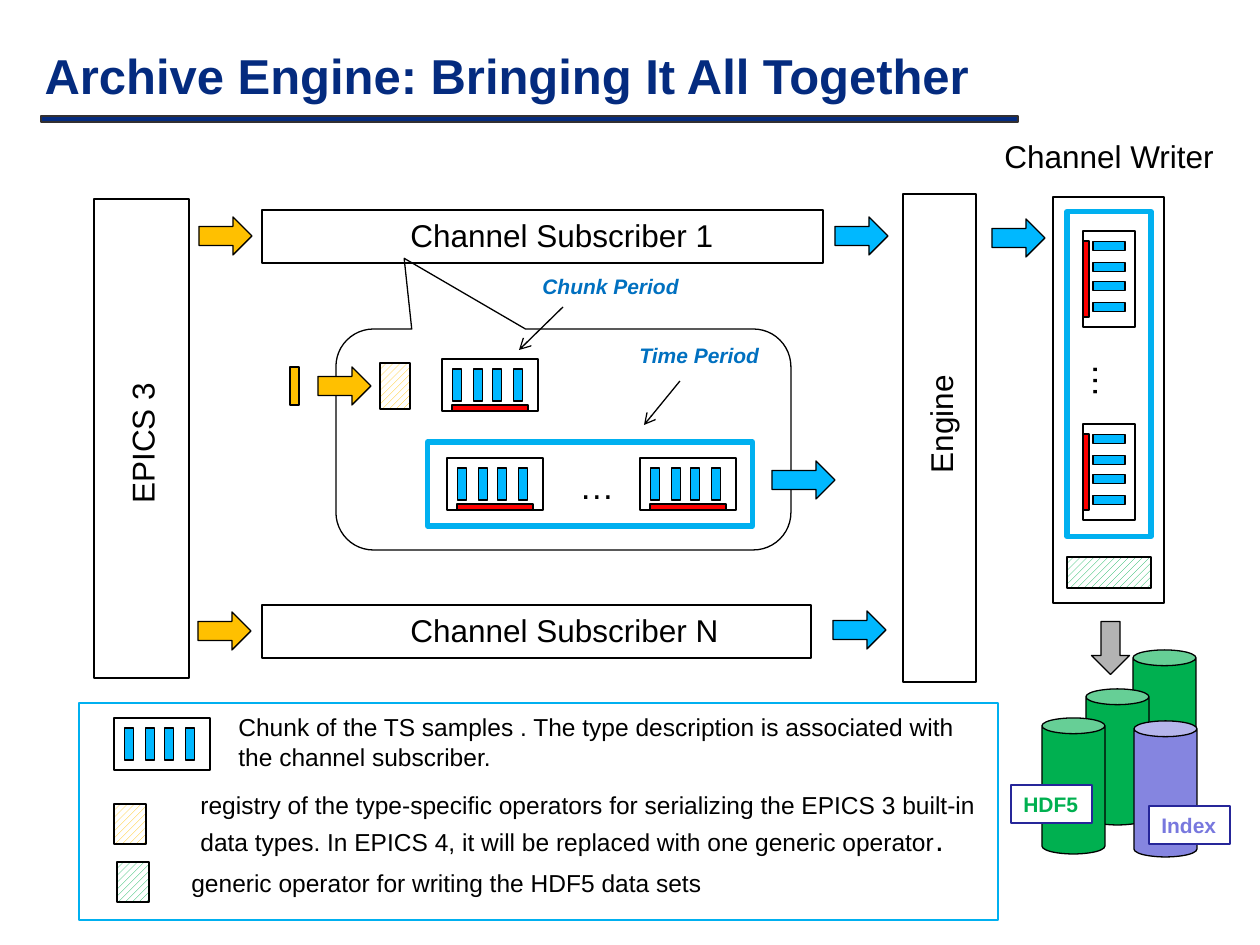
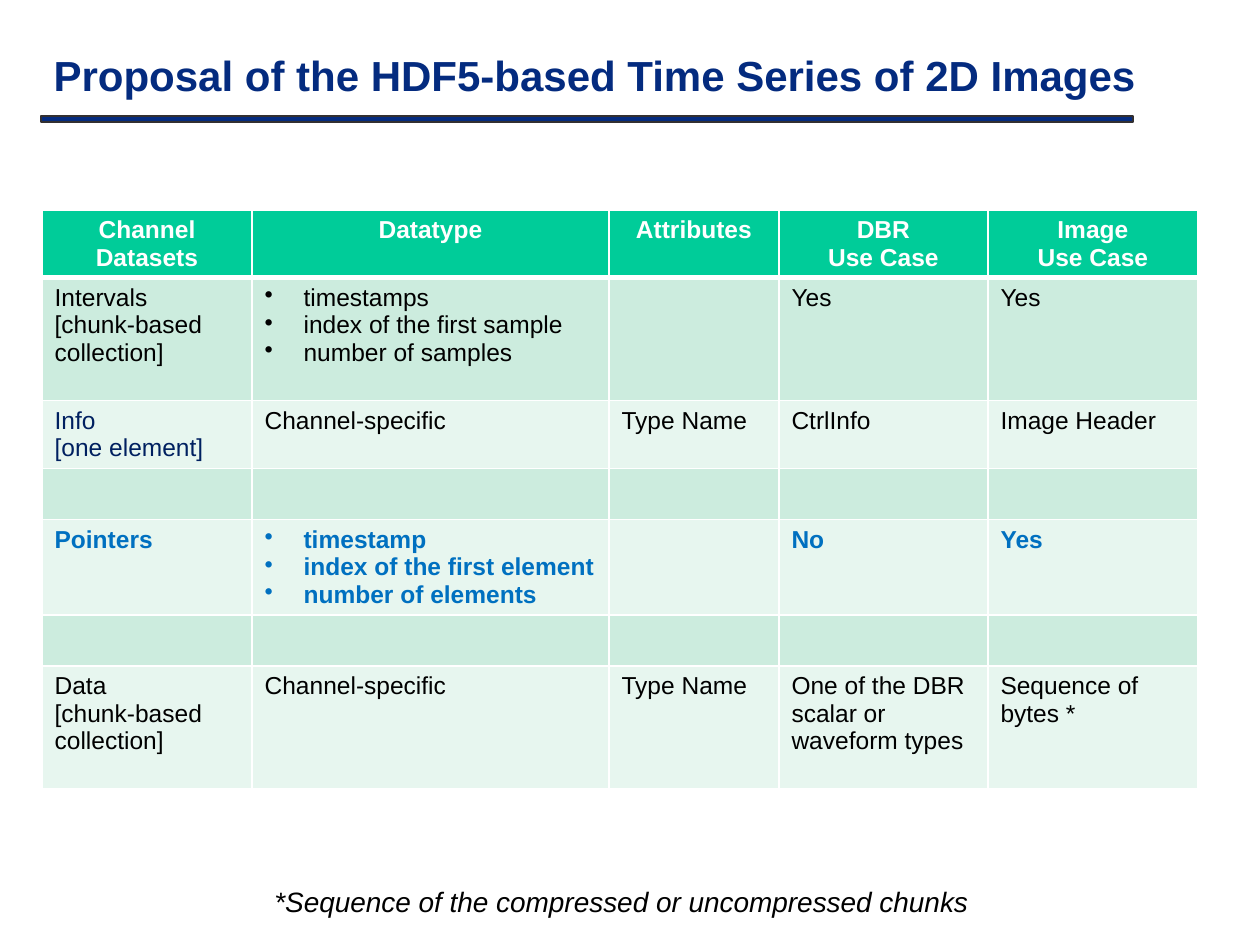
"""Build two slides on the archive engine and its HDF5 time series."""
import math
from dataclasses import dataclass

import lxml.etree
import pptx
import pptx.dml.color
import pptx.enum.dml
import pptx.enum.shapes
import pptx.enum.text
import pptx.oxml.ns
import pptx.shapes.autoshape
import pptx.slide
import pptx.table
import pptx.text.text
import pptx.util

EMU_PER_PX = 914400 / 126
FONT = "Arial"
COLORS = {
    "navy": "042B7F", "rule edge": "322F31", "black": "000000", "white": "FFFFFF",
    "orange": "FFC000", "blue": "00B8FF", "frame": "00B0F0", "grey": "B3B3B3",
    "green": "00B050", "violet": "8585E0", "index": "7878DE", "tag edge": "262699",
    "red": "FF0000", "note": "0070C0", "info": "002060",
    "header": "00CC99", "band": "CCECDE", "pale": "E7F6EF",
}
MSO = pptx.enum.shapes.MSO_SHAPE


@dataclass(frozen=True)
class Block:
    left: float
    top: float
    width: float
    height: float
    fill: str = ""
    kind: MSO = MSO.RECTANGLE
    line: str = "black"
    weight: float = 0.75
    rotation: int = 0
    hatched: bool = False


@dataclass(frozen=True)
class Label:
    left: float
    top: float
    width: int
    height: int
    lines: tuple[str, ...]
    size: int = 18
    color: str = "black"
    bold: bool = False
    italic: bool = False
    rotation: int = 0
    wrap: bool = False


@dataclass(frozen=True)
class Spot:
    """A centre that parts are placed around, turned by quarter turns."""
    x: float
    y: float
    rotation: int = 0

    def shift(self, dx: float, dy: float) -> "Spot":
        turn = math.radians(self.rotation)
        cos, sin = round(math.cos(turn)), round(math.sin(turn))
        return Spot(self.x + dx * cos - dy * sin, self.y + dx * sin + dy * cos, self.rotation)

    def corner(self, width: float, height: float) -> tuple[float, float]:
        return self.x - width / 2, self.y - height / 2


def px(*lengths: float) -> list[pptx.util.Emu]:
    return [pptx.util.Emu(round(length * EMU_PER_PX)) for length in lengths]


def rgb(name: str) -> pptx.dml.color.RGBColor:
    return pptx.dml.color.RGBColor.from_string(COLORS[name])


def style(paragraph: pptx.text.text._Paragraph, size: int, color: str,
          bold: bool = False, italic: bool = False) -> None:
    font = paragraph.font
    font.name, font.size = FONT, pptx.util.Pt(size)
    font.bold, font.italic = bold, italic
    font.color.rgb = rgb(color)


def write(frame: pptx.text.text.TextFrame, label: Label) -> None:
    frame.text = "\n".join(label.lines)
    frame.word_wrap = label.wrap
    frame.vertical_anchor = pptx.enum.text.MSO_ANCHOR.TOP
    for paragraph in frame.paragraphs:
        paragraph.alignment = pptx.enum.text.PP_ALIGN.LEFT
        style(paragraph, label.size, label.color, label.bold, label.italic)


def draw_label(slide: pptx.slide.Slide, label: Label) -> pptx.text.text.TextFrame:
    box = slide.shapes.add_textbox(*px(label.left, label.top, label.width, label.height))
    box.rotation = label.rotation
    write(box.text_frame, label)
    return box.text_frame


def draw_block(slide: pptx.slide.Slide, block: Block) -> pptx.shapes.autoshape.Shape:
    shape = slide.shapes.add_shape(
        block.kind, *px(block.left, block.top, block.width, block.height))
    shape.shadow.inherit = False
    shape.rotation = block.rotation
    shape.line.color.rgb = rgb(block.line)
    shape.line.width = pptx.util.Pt(block.weight)
    if block.hatched:
        shape.fill.patterned()
        shape.fill.pattern = pptx.enum.dml.MSO_PATTERN.WIDE_UPWARD_DIAGONAL
        shape.fill.fore_color.rgb = rgb(block.fill)
        shape.fill.back_color.rgb = rgb("white")
    elif block.fill:
        shape.fill.solid()
        shape.fill.fore_color.rgb = rgb(block.fill)
    else:
        shape.fill.background()
    return shape


def draw_around(slide: pptx.slide.Slide, spot: Spot, width: int, height: int,
                fill: str = "", line: str = "black", weight: float = 0.75) -> None:
    left, top = spot.corner(width, height)
    draw_block(slide, Block(left, top, width, height, fill, line=line, weight=weight,
                            rotation=spot.rotation))


def draw_chunk(slide: pptx.slide.Slide, spot: Spot, typed: bool = True) -> None:
    for sample in (-33, -12, 7, 28):
        draw_around(slide, spot.shift(sample, 0), 9, 32, "blue")
    draw_around(slide, spot, 96, 52)
    if typed:
        draw_around(slide, spot.shift(0, 23), 76, 6, "red")


def draw_time_period(slide: pptx.slide.Slide, spot: Spot) -> None:
    for offset in (-95, 98):
        draw_chunk(slide, spot.shift(offset, 0))
    draw_around(slide, spot, 325, 84, line="frame", weight=3)
    left, top = spot.shift(7, 2).corner(60, 55)
    draw_label(slide, Label(left, top, 60, 55, ("…",), 20, rotation=spot.rotation))


def draw_arrow(slide: pptx.slide.Slide, left: int, top: int, fill: str,
               width: int = 53, rotation: int = 0) -> None:
    draw_block(slide, Block(left, top, width, 38, fill, MSO.RIGHT_ARROW, rotation=rotation))


def draw_pointer(slide: pptx.slide.Slide, *ends: int) -> None:
    pointer = slide.shapes.add_connector(
        pptx.enum.shapes.MSO_CONNECTOR.STRAIGHT, *px(*ends))
    pointer.line.color.rgb = rgb("black")
    pointer.line.width = pptx.util.Pt(0.75)
    qn = pptx.oxml.ns.qn
    lxml.etree.SubElement(pointer.line._get_or_add_ln(), qn("a:tailEnd"), type="arrow")
    lxml.etree.SubElement(pointer._element.spPr, qn("a:effectLst"))


def add_titled_slide(deck: pptx.presentation.Presentation, heading: str, size: int,
                     area: tuple[int, int, int, int], rule_width: int) -> pptx.slide.Slide:
    slide = deck.slides.add_slide(deck.slide_layouts[5])
    title = slide.shapes.title
    title.left, title.top, title.width, title.height = px(*area)
    frame = title.text_frame
    frame.text = heading
    frame.word_wrap = True
    frame.auto_size = pptx.enum.text.MSO_AUTO_SIZE.NONE
    frame.vertical_anchor = pptx.enum.text.MSO_ANCHOR.MIDDLE
    paragraph = frame.paragraphs[0]
    paragraph.alignment = pptx.enum.text.PP_ALIGN.LEFT
    paragraph.line_spacing = 0.8
    style(paragraph, size, "navy", bold=True)
    draw_block(slide, Block(41, 116, rule_width, 6, "navy", line="rule edge"))
    return slide


def build_engine_slide(deck: pptx.presentation.Presentation) -> None:
    slide = add_titled_slide(deck, "Archive Engine: Bringing It All Together", 28,
                             (32, 42, 960, 77), 977)
    stages = (Block(903, 194, 73, 488), Block(94, 199, 95, 479), Block(1053, 197, 111, 406),
              Block(262, 210, 561, 53), Block(262, 605, 549, 53))
    stores = [Block(left, top, 63, 136, fill, MSO.CAN) for left, top, fill in (
        (1133, 650, "green"), (1086, 689, "green"), (1042, 718, "green"),
        (1134, 721, "violet"))]
    legend = Block(79, 703, 919, 217, "white", line="frame")
    operators = [Block(*area, fill, hatched=True) for area, fill in (
        ((1067, 557, 84, 31), "green"), ((114, 804, 32, 40), "orange"),
        ((117, 862, 32, 40), "green"), ((380, 363, 30, 46), "orange"))]
    sample = Block(290, 367, 9, 38, "orange")
    for block in (*stages, *stores, legend, *operators, sample):
        draw_block(slide, block)

    callout = draw_block(
        slide, Block(336, 329, 455, 221, kind=MSO.ROUNDED_RECTANGULAR_CALLOUT))
    for index, value in enumerate((-0.35, -0.82, 0.17)):
        callout.adjustments[index] = value

    for left, top, fill in ((199, 217, "orange"), (198, 612, "orange"), (318, 367, "orange"),
                            (835, 217, "blue"), (833, 611, "blue"), (992, 219, "blue")):
        draw_arrow(slide, left, top, fill)
    draw_arrow(slide, 772, 461, "blue", width=63)
    draw_arrow(slide, 1084, 629, "grey", rotation=90)

    draw_chunk(slide, Spot(162, 744), typed=False)
    draw_chunk(slide, Spot(490, 385))
    draw_time_period(slide, Spot(590, 484))
    draw_time_period(slide, Spot(1109, 374, 90))

    for label in (
        Label(398, 210, 331, 50, ("Channel Subscriber 1",)),
        Label(398, 605, 336, 50, ("Channel Subscriber N",)),
        Label(992, 131, 237, 50, ("Channel Writer",)),
        Label(878, 398, 125, 50, ("Engine",), rotation=270),
        Label(64, 413, 156, 50, ("EPICS 3",), rotation=270),
        Label(530, 267, 164, 38, ("Chunk Period",), 12, "note", True, True),
        Label(627, 336, 146, 38, ("Time Period",), 12, "note", True, True),
        Label(226, 706, 745, 72, (
            "Chunk of the TS samples . The type description is associated with",
            "the channel subscriber."), 14),
        Label(179, 862, 544, 43, ("generic operator for writing the HDF5 data sets",), 14),
    ):
        draw_label(slide, label)
    registry = draw_label(slide, Label(188, 784, 811, 81, (
        "registry of the type-specific operators for serializing the EPICS 3 built-in "
        "data types. In EPICS 4, it will be replaced with one generic operator",),
        14, wrap=True))
    full_stop = registry.paragraphs[0].add_run()
    full_stop.text = "."
    full_stop.font.size = pptx.util.Pt(18)

    draw_pointer(slide, 563, 307, 519, 350)
    draw_pointer(slide, 680, 381, 644, 425)
    for tag in (Label(1149, 806, 81, 38, ("Index",), 12, "index", True),
                Label(1011, 785, 81, 38, ("HDF5",), 12, "green", True)):
        plate = draw_block(slide, Block(tag.left, tag.top, tag.width, tag.height,
                                        "white", line="tag edge"))
        write(plate.text_frame, tag)


def add_bullet(paragraph: pptx.text.text._Paragraph) -> None:
    properties = paragraph._p.get_or_add_pPr()
    indent = px(39)[0]
    properties.set("marL", str(indent))
    properties.set("indent", str(-indent))
    lxml.etree.SubElement(properties, pptx.oxml.ns.qn("a:buChar"), char="•")


def set_borders(cell: pptx.table._Cell, bottom: int) -> None:
    qn = pptx.oxml.ns.qn
    properties = cell._tc.get_or_add_tcPr()
    for index, (side, weight) in enumerate(
            (("lnL", 1), ("lnR", 1), ("lnT", 1), ("lnB", bottom))):
        edge = lxml.etree.Element(qn(f"a:{side}"), w=str(pptx.util.Pt(weight)))
        fill = lxml.etree.SubElement(edge, qn("a:solidFill"))
        lxml.etree.SubElement(fill, qn("a:srgbClr"), val=COLORS["white"])
        properties.insert(index, edge)


def build_datasets_slide(deck: pptx.presentation.Presentation) -> None:
    slide = add_titled_slide(deck, "Proposal of the HDF5-based Time Series of 2D Images", 24,
                             (41, 32, 1156, 94), 1092)
    empty = ("",) * 5
    datasets = (
        ("Channel Datasets", "Datatype", "Attributes", "DBR\nUse Case", "Image\nUse Case"),
        ("Intervals\n[chunk-based collection]",
         "timestamps\nindex of the first sample\nnumber of samples", "", "Yes", "Yes"),
        ("Info\n[one element]", "Channel-specific", "Type Name", "CtrlInfo", "Image Header"),
        empty,
        ("Pointers", "timestamp\nindex of the first element\nnumber of elements",
         "", "No", "Yes"),
        empty,
        ("Data\n[chunk-based collection]", "Channel-specific", "Type Name",
         "One of the DBR scalar or waveform types", "Sequence of bytes *"),
    )
    widths, heights = px(210, 357, 170, 209, 210), px(67, 123, 68, 51, 95, 51, 123)
    left, top = px(42, 210)
    table = slide.shapes.add_table(len(heights), len(widths), left, top,
                                   sum(widths), sum(heights)).table
    for column, width in zip(table.columns, widths):
        column.width = width
    for row_index, (dataset, height) in enumerate(zip(datasets, heights)):
        table.rows[row_index].height = height
        header, pointers = row_index == 0, dataset[0] == "Pointers"
        for column_index, words in enumerate(dataset):
            cell = table.cell(row_index, column_index)
            cell.fill.solid()
            cell.fill.fore_color.rgb = rgb(
                "header" if header else "band" if row_index % 2 else "pale")
            set_borders(cell, 3 if header else 1)
            if not words:
                continue
            info = words.startswith("Info")
            color = ("white" if header else "note" if pointers else "info" if info else "black")
            cell.text = words
            for paragraph in cell.text_frame.paragraphs:
                if header:
                    paragraph.alignment = pptx.enum.text.PP_ALIGN.CENTER
                elif column_index == 1 and "\n" in words:
                    add_bullet(paragraph)
                style(paragraph, 14, color, bold=header or pointers)
    draw_label(slide, Label(262, 878, 728, 47, (
        "*Sequence of the compressed or uncompressed chunks",), 16, italic=True))


def main() -> None:
    deck = pptx.Presentation()
    deck.slide_width, deck.slide_height = px(1260, 945)
    build_engine_slide(deck)
    build_datasets_slide(deck)
    deck.save("out.pptx")


if __name__ == "__main__":
    main()
